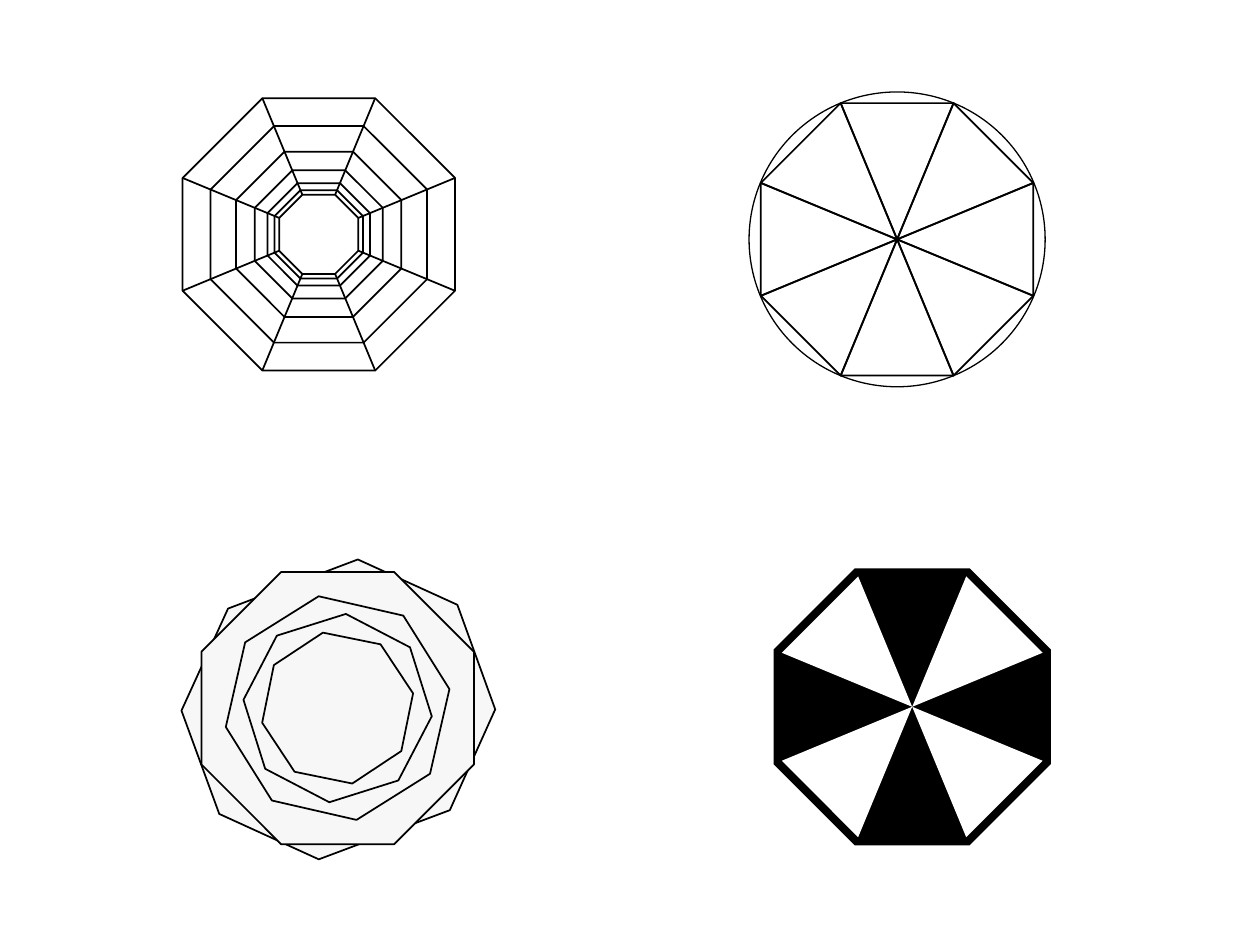
from dataclasses import dataclass
from math import cos, radians, sin

from lxml.etree import SubElement
from pptx import Presentation
from pptx.dml.color import RGBColor
from pptx.enum.shapes import MSO_CONNECTOR, MSO_SHAPE
from pptx.oxml.ns import qn
from pptx.util import Inches, Pt

COLUMNS, ROWS = 10, 7.5
COLORS = {"ink": "000000", "paper": "FFFFFF", "mist": "F7F7F7"}
STEP = 45
HALF_STEP = STEP / 2


@dataclass
class Figure:
    """Draws one octagon figure around a centre given in grid columns and rows."""

    slide: object
    column: float
    row: float

    def __post_init__(self):
        self.shapes = self.slide.shapes.add_group_shape().shapes
        self.center = (self.column, self.row)

    def vertex(self, radius, angle):
        turn = radians(angle)
        return self.column + radius * sin(turn), self.row - radius * cos(turn)

    def style(self, shape, fill=None, weight=1):
        shape.shadow.inherit = False
        if fill:
            shape.fill.solid()
            shape.fill.fore_color.rgb = RGBColor.from_string(COLORS[fill])
        else:
            shape.fill.background()
        if weight:
            self.ink(shape.line, weight)
        else:
            shape.line.fill.background()

    def ink(self, line, weight):
        line.width = Pt(weight)
        line.color.rgb = RGBColor.from_string(COLORS["ink"])

    def outline(self, points, fill=None, weight=1):
        start, *rest = [(Inches(x), Inches(y)) for x, y in points]
        builder = self.shapes.build_freeform(*start)
        builder.add_line_segments(rest, close=True)
        self.style(builder.convert_to_shape(), fill, weight)

    def octagon(self, radius, tilt=HALF_STEP, fill=None, weight=1):
        corners = [self.vertex(radius, tilt + STEP * k) for k in range(8)]
        self.outline(corners, fill, weight)

    def wedge(self, radius, middle, fill=None, weight=1):
        ends = [self.vertex(radius, middle + side) for side in (-HALF_STEP, HALF_STEP)]
        self.outline([self.center, *ends], fill, weight)

    def spoke(self, inner, outer, angle):
        ends = (*self.vertex(inner, angle), *self.vertex(outer, angle))
        connector = self.shapes.add_connector(
            MSO_CONNECTOR.STRAIGHT, *[Inches(length) for length in ends])
        self.ink(connector.line, 1)
        SubElement(connector._element.spPr, qn("a:effectLst"))

    def ring(self, width, height, weight):
        box = (self.column - width / 2, self.row - height / 2, width, height)
        circle = self.shapes.add_shape(
            MSO_SHAPE.OVAL, *[Inches(length) for length in box])
        self.style(circle, weight=weight)


def draw_turned_stack(slide):
    stack = Figure(slide, 2.68, 5.62)
    uneven_octagon = [(1.74, 6.46), (1.44, 5.64), (1.81, 4.83), (2.84, 4.44),
                      (3.63, 4.8), (3.93, 5.63), (3.57, 6.43), (2.53, 6.82)]
    stack.outline(uneven_octagon, "mist")
    for radius, tilt in [(1.17, HALF_STEP), (0.9, -9.6), (0.75, 5), (0.61, -11)]:
        stack.octagon(radius, tilt, "mist")


def draw_web(slide):
    web = Figure(slide, 2.53, 1.86)
    radii = [1.17, 0.93, 0.71, 0.55, 0.44, 0.38, 0.34]
    for radius in radii:
        web.octagon(radius)
    for k in range(8):
        web.spoke(radii[-1], radii[0], HALF_STEP + STEP * k)


def draw_wheel(slide):
    wheel = Figure(slide, 7.12, 1.9)
    for k in range(8):
        wheel.wedge(1.17, STEP * k)
    wheel.ring(2.35, 2.34, 0.75)


def draw_badge(slide):
    badge = Figure(slide, 7.24, 5.61)
    badge.octagon(1.19, fill="ink", weight=0)
    for k in range(1, 8, 2):
        badge.wedge(1.12, STEP * k, "paper", weight=0)


def main():
    deck = Presentation()
    deck.slide_width, deck.slide_height = Inches(COLUMNS), Inches(ROWS)
    slide = deck.slides.add_slide(deck.slide_layouts[6])
    for draw in (draw_turned_stack, draw_web, draw_wheel, draw_badge):
        draw(slide)
    deck.save("out.pptx")


if __name__ == "__main__":
    main()
